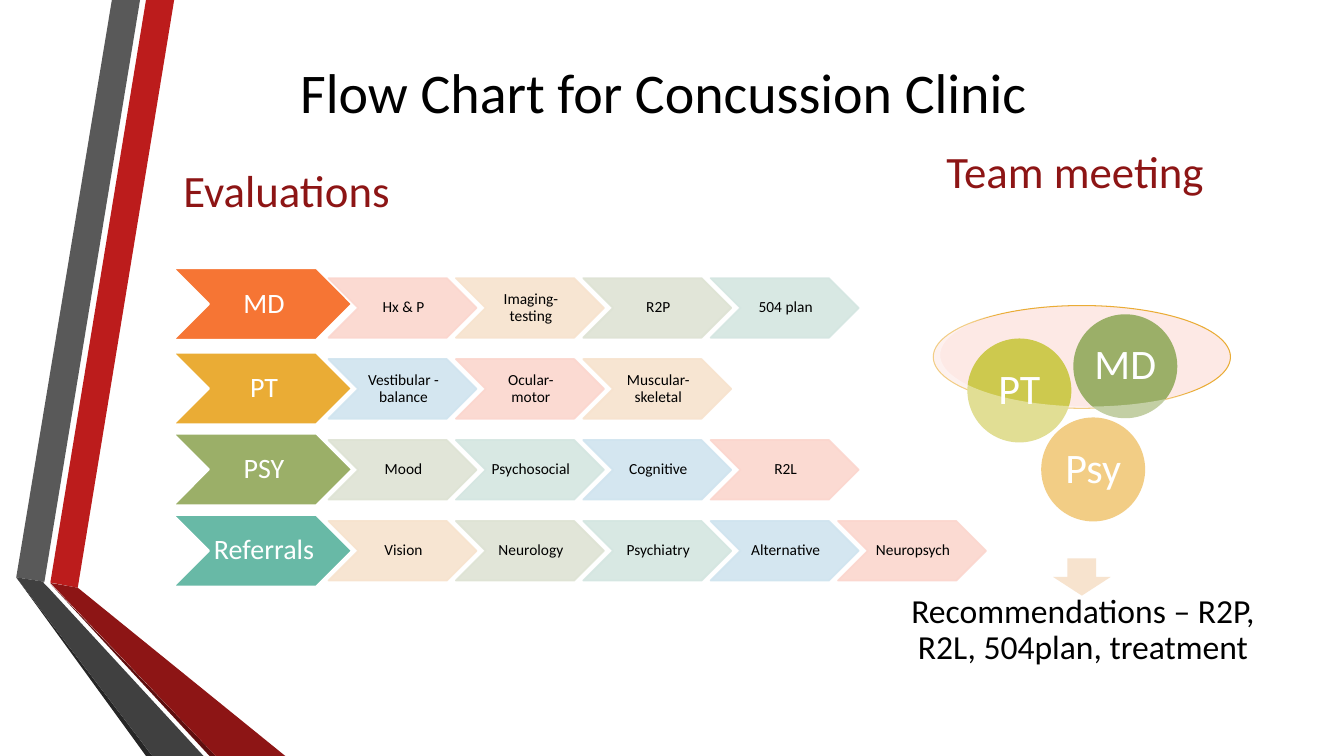
from lxml import etree
from pptx import Presentation
from pptx.dml.color import RGBColor
from pptx.enum.shapes import MSO_SHAPE
from pptx.enum.text import MSO_ANCHOR, PP_ALIGN
from pptx.oxml.ns import qn
from pptx.util import Cm, Pt

CHEVRON = MSO_SHAPE.CHEVRON
OVAL = MSO_SHAPE.OVAL
DOWN_ARROW = MSO_SHAPE.DOWN_ARROW
FUNNEL = MSO_SHAPE.FUNNEL
LEFT = PP_ALIGN.LEFT
CENTER = PP_ALIGN.CENTER
MIDDLE = MSO_ANCHOR.MIDDLE
BOTTOM = MSO_ANCHOR.BOTTOM

COLORS = {
    "black": "000000", "white": "FFFFFF",
    "red": "BC1C1C", "dark red": "8D1515", "deep red": "5E0E0E",
    "grey": "595959", "dark grey": "404040", "deep grey": "262626",
    "orange": "F67534", "amber": "EAAC35", "green": "9BAF68",
    "teal": "68B9A6", "lime": "CDC94E", "rose": "FBCABF",
    "pale rose": "FBD6CE", "pale amber": "F7E3CE", "pale green": "DEE3D4",
    "pale teal": "D4E6E1", "pale blue": "D0E4EF",
}

RIBBONS = [
    ("red", [(1.27, 14.68), (1.96, 14.81), (4.39, 0), (3.68, 0)]),
    ("grey", [(3.53, 0), (2.82, 0), (0.41, 14.55), (1.12, 14.66)]),
    ("deep grey", [(0.41, 14.55), (3.68, 19.05), (3.84, 19.05)]),
    ("deep red", [(1.27, 14.71), (5.28, 19.05), (5.44, 19.05)]),
    ("dark red", [(1.27, 14.69), (5.44, 19.05), (7.19, 19.05), (1.96, 14.81)]),
    ("dark grey", [(5.13, 19.05), (1.22, 14.81), (1.09, 14.68),
                   (1.12, 14.66), (0.41, 14.55), (3.84, 19.05)]),
]

STEP_CYCLE = ["pale rose", "pale amber", "pale green", "pale teal", "pale blue"]
EVALUATIONS = [
    ("MD", "orange", ["Hx & P", "Imaging- testing", "R2P", "504 plan"]),
    ("PT", "amber", ["Vestibular - balance", "Ocular- motor", "Muscular-skeletal"]),
    ("PSY", "green", ["Mood", "Psychosocial", "Cognitive", "R2L"]),
    ("Referrals", "teal",
     ["Vision", "Neurology", "Psychiatry", "Alternative", "Neuropsych"]),
]
FIRST_TINTS = [0, 4, 2, 1]
HEAD_TOPS = [6.76, 8.89, 10.93, 12.98]
STEP_LEFT, STEP_TOP = 8.28, 7.01
STEP_PITCH, ROW_PITCH = 3.21, 2.04

TEAM = [
    ("Psy", "amber", 26.24, 10.52),
    ("PT", "lime", 24.38, 8.53),
    ("MD", "green", 27.05, 7.92),
]


def write(shape, text, size=11, color="black", align=CENTER, anchor=MIDDLE,
          margins=(0.05, 0.03, 0, 0.03), spacing=0.9):
    frame = shape.text_frame
    frame.word_wrap = True
    frame.vertical_anchor = anchor
    (frame.margin_left, frame.margin_top,
     frame.margin_right, frame.margin_bottom) = [Cm(margin) for margin in margins]
    para = frame.paragraphs[0]
    para.alignment = align
    para.line_spacing = spacing
    span = para.add_run()
    span.text = text
    span.font.name = "Calibri"
    span.font.size = Pt(size)
    span.font.color.rgb = RGBColor.from_string(COLORS[color])


class Slide:
    plain = {"margins": (0.25, 0.13, 0.25, 0.13), "spacing": 1.0}

    def __init__(self, page):
        self.shapes = page.shapes

    def paint(self, shape, fill, alpha=100, line=None, line_width=1.25, line_alpha=100):
        shape.shadow.inherit = False
        shape.fill.solid()
        shape.fill.fore_color.rgb = RGBColor.from_string(COLORS[fill])
        if line:
            shape.line.color.rgb = RGBColor.from_string(COLORS[line])
            shape.line.width = Pt(line_width)
        else:
            shape.line.fill.background()
        properties = shape._element.spPr
        for holder, opacity in ((properties, alpha),
                                (properties.find(qn("a:ln")), line_alpha)):
            color = holder.find(f"{qn('a:solidFill')}/{qn('a:srgbClr')}")
            if color is not None and opacity < 100:
                etree.SubElement(color, qn("a:alpha"), val=str(opacity * 1000))

    def ribbon(self, points, fill):
        corners = [(Cm(x), Cm(y)) for x, y in points]
        builder = self.shapes.build_freeform(*corners[0])
        builder.add_line_segments(corners[1:], close=True)
        self.paint(builder.convert_to_shape(), fill)

    def shape(self, kind, left, top, width, height, fill, **style):
        shape = self.shapes.add_shape(kind, Cm(left), Cm(top), Cm(width), Cm(height))
        self.paint(shape, fill, **style)
        return shape

    def label(self, text, left, top, width, height, **style):
        box = self.shapes.add_textbox(Cm(left), Cm(top), Cm(width), Cm(height))
        write(box, text, **{**self.plain, **style})

    def evaluation(self, row, name, fill, steps):
        head = self.shape(CHEVRON, 4.37, HEAD_TOPS[row], 4.5, 1.8, fill, line="white")
        write(head, name, size=20, color="white", margins=(0.07, 0.03, 0, 0.03))
        for column, step in enumerate(steps):
            tint = STEP_CYCLE[(FIRST_TINTS[row] + column) % len(STEP_CYCLE)]
            chevron = self.shape(
                CHEVRON, STEP_LEFT + column * STEP_PITCH, STEP_TOP + row * ROW_PITCH,
                3.73, 1.5, tint, alpha=90, line=tint, line_alpha=90)
            write(chevron, step)

    def member(self, name, fill, left, top):
        circle = self.shape(OVAL, left, top, 2.62, 2.62, fill)
        write(circle, name, size=30, color="white", margins=(0.1,) * 4)


def main():
    deck = Presentation()
    deck.slide_width, deck.slide_height = Cm(33.87), Cm(19.05)
    slide = Slide(deck.slides.add_slide(deck.slide_layouts[6]))

    for fill, points in RIBBONS:
        slide.ribbon(points, fill)

    slide.label("Flow Chart for Concussion Clinic", 5.16, 0.91, 23.11, 2.77, size=40)
    heading = {"size": 32, "color": "dark red", "align": LEFT, "anchor": BOTTOM}
    slide.label("Evaluations", 4.37, 4.29, 7.37, 1.3, **heading)
    for row, (name, fill, steps) in enumerate(EVALUATIONS):
        slide.evaluation(row, name, fill, steps)

    slide.label("Team meeting", 23.6, 3.53, 8.05, 1.57, **heading)
    slide.shape(OVAL, 23.52, 7.7, 7.49, 2.59, "rose",
                alpha=40, line="amber", line_width=0.75)
    slide.shape(DOWN_ARROW, 26.54, 14.07, 1.45, 0.94, "pale amber")
    slide.label("Recommendations – R2P, R2L, 504plan, treatment",
                22.28, 14.48, 10.03, 2.82, size=24, margins=(0.48,) * 4, spacing=0.9)
    for member in TEAM:
        slide.member(*member)
    slide.shape(FUNNEL, 23.37, 7.32, 8.13, 6.5, "white", alpha=40)

    deck.save("out.pptx")


if __name__ == "__main__":
    main()
